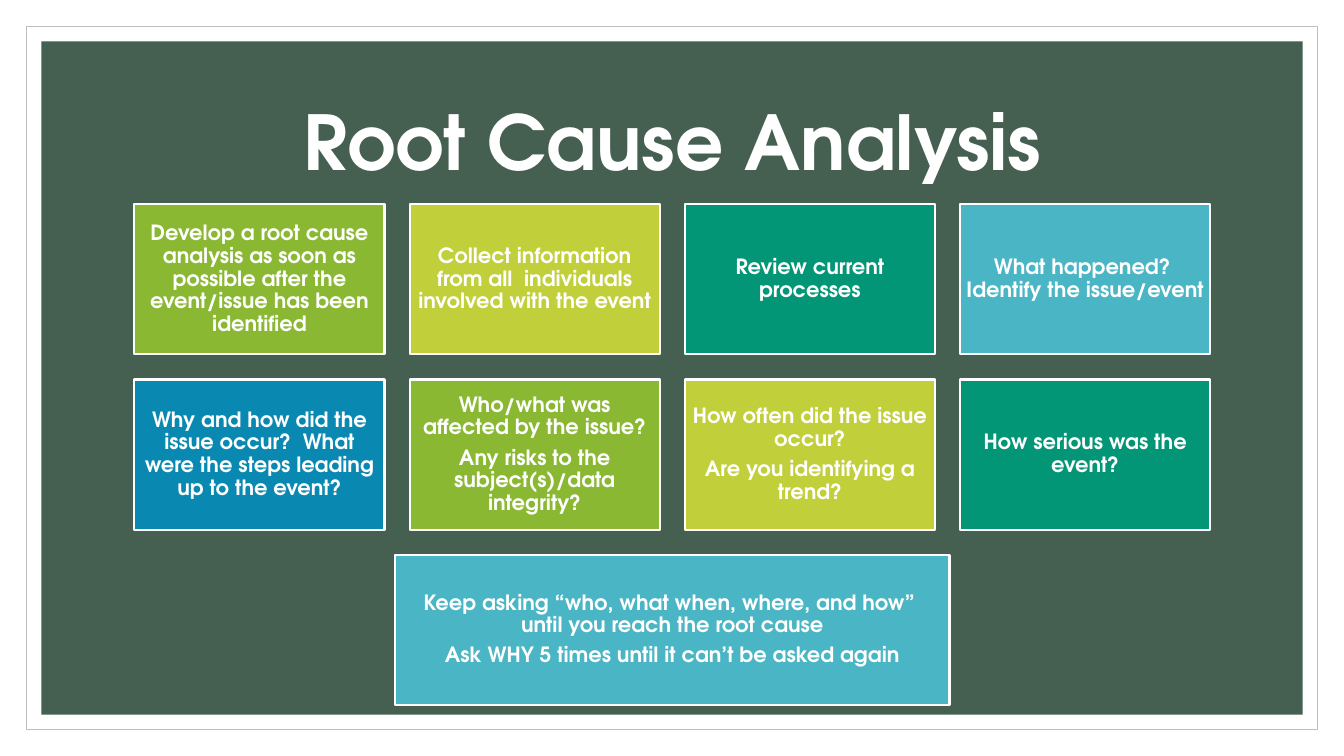
from pptx import Presentation
from pptx.dml.color import RGBColor
from pptx.enum.shapes import MSO_SHAPE as Shape
from pptx.enum.text import MSO_ANCHOR as Anchor, PP_ALIGN as Align
from pptx.util import Pt

WHITE = RGBColor(0xFF, 0xFF, 0xFF)
SILVER = RGBColor(0xBF, 0xBF, 0xBF)
FOREST = RGBColor(0x45, 0x5F, 0x51)
GREEN = RGBColor(0x8A, 0xB8, 0x33)
LIME = RGBColor(0xC0, 0xCF, 0x3A)
TEAL = RGBColor(0x02, 0x96, 0x76)
AQUA = RGBColor(0x4A, 0xB5, 0xC4)
BLUE = RGBColor(0x09, 0x89, 0xB1)

FONT = "TeX Gyre Adventor"
PAGE_WIDTH, PAGE_HEIGHT = 960, 540
COLUMNS = 4
CARD_WIDTH, CARD_HEIGHT, GAP = 178.7, 107.2, 17.9
WIDE_WIDTH = 396

CARDS = [
    (GREEN, ["Develop a root cause analysis as soon as possible after the "
             "event/issue has been identified"]),
    (LIME, ["Collect information from all  individuals involved with the event"]),
    (TEAL, ["Review current processes"]),
    (AQUA, ["What happened?  Identify the issue/event"]),
    (BLUE, ["Why and how did the issue occur?  What were the steps leading "
            "up to the event?"]),
    (GREEN, ["Who/what was affected by the issue?",
             "Any risks to the subject(s)/data integrity?"]),
    (LIME, ["How often did the issue occur?", "Are you identifying a trend?"]),
    (TEAL, ["How serious was the event?"]),
]
CONCLUSION = [
    "Keep asking “who, what when, where, and how”  until you reach the root cause",
    "Ask WHY 5 times until it can’t be asked again",
]


def write_text(shape, lines, size=15, color=WHITE, inset=4.3, space_after=5.25):
    """Fill a shape with centred bold paragraphs."""
    frame = shape.text_frame
    frame.word_wrap = True
    frame.vertical_anchor = Anchor.MIDDLE
    frame.margin_left = frame.margin_right = Pt(inset)
    frame.margin_top = frame.margin_bottom = Pt(inset)
    for index, line in enumerate(lines):
        para = frame.add_paragraph() if index else frame.paragraphs[0]
        para.alignment = Align.CENTER
        para.line_spacing = 0.9
        para.space_after = Pt(space_after)
        span = para.add_run()
        span.text = line
        span.font.name = FONT
        span.font.size = Pt(size)
        span.font.bold = True
        span.font.color.rgb = color


def add_panel(page, box, fill, line=None, line_width=1.5):
    """Draw a flat rectangle in the box."""
    panel = page.shapes.add_shape(Shape.RECTANGLE, *map(Pt, box))
    panel.shadow.inherit = False
    panel.fill.solid()
    panel.fill.fore_color.rgb = fill
    if line is None:
        panel.line.fill.background()
    else:
        panel.line.color.rgb = line
        panel.line.width = Pt(line_width)
    return panel


def add_backdrop(page, box):
    """Draw the thin outer frame and the dark field inside it."""
    left, top, width, height = box
    border = 10.8
    add_panel(page, box, WHITE, line=SILVER, line_width=0.5)
    inner = (left + border, top + border, width - 2 * border, height - 2 * border)
    add_panel(page, inner, FOREST)


def add_title(page, box):
    """Place the slide heading."""
    title = page.shapes.add_textbox(*map(Pt, box))
    write_text(title, ["Root Cause Analysis"], size=54, space_after=0)


def add_cards(page, box):
    """Lay out the question cards in a grid with the wide card centred below."""
    left, top, width, height = box
    for index, (fill, lines) in enumerate(CARDS):
        row, column = divmod(index, COLUMNS)
        card_box = (left + column * (CARD_WIDTH + GAP),
                    top + row * (CARD_HEIGHT + GAP), CARD_WIDTH, CARD_HEIGHT)
        write_text(add_panel(page, card_box, fill, line=WHITE), lines)
    wide_box = (left + (width - WIDE_WIDTH) / 2, top + height - CARD_HEIGHT,
                WIDE_WIDTH, CARD_HEIGHT)
    write_text(add_panel(page, wide_box, AQUA, line=WHITE), CONCLUSION)


def main():
    """Build and save the deck."""
    deck = Presentation()
    deck.slide_width, deck.slide_height = Pt(PAGE_WIDTH), Pt(PAGE_HEIGHT)
    page = deck.slides.add_slide(deck.slide_layouts[6])
    frame = 18.7
    add_backdrop(page, (frame, frame, PAGE_WIDTH - 2 * frame, PAGE_HEIGHT - 2 * frame))
    add_title(page, (84, 50.4, 792, 108))
    grid_width = COLUMNS * CARD_WIDTH + (COLUMNS - 1) * GAP
    add_cards(page, (96, 146, grid_width, 3 * CARD_HEIGHT + 2 * GAP))
    deck.save("out.pptx")


if __name__ == "__main__":
    main()
